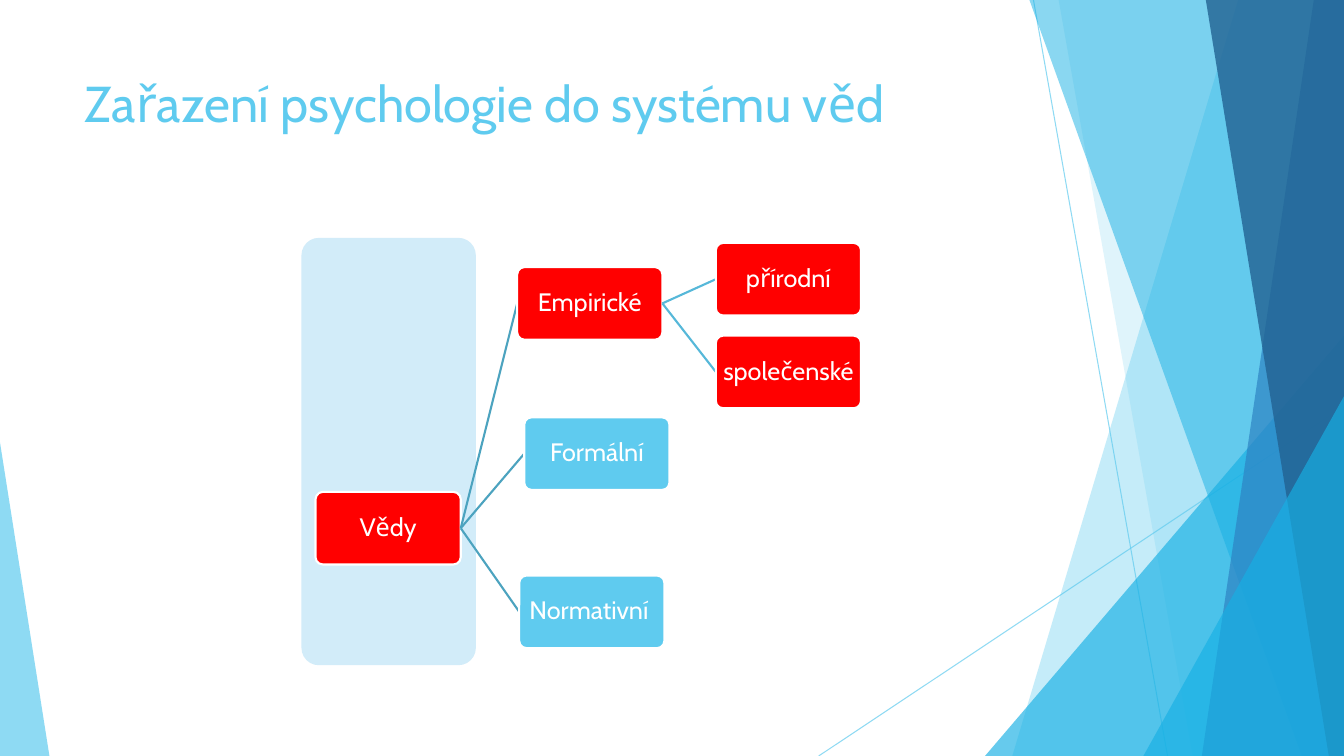
from dataclasses import dataclass

from lxml.etree import SubElement
from pptx import Presentation
from pptx.dml.color import RGBColor
from pptx.enum.shapes import MSO_CONNECTOR, MSO_SHAPE
from pptx.enum.text import MSO_ANCHOR, MSO_AUTO_SIZE, PP_ALIGN
from pptx.oxml.ns import qn
from pptx.shapes.autoshape import Shape
from pptx.shapes.connector import Connector
from pptx.slide import Slide
from pptx.util import Pt

PX = 9144
FONT = "Cabin"
WHITE = RGBColor(0xFF, 0xFF, 0xFF)
RED = RGBColor(0xFF, 0x00, 0x00)
SKY = RGBColor(0x5F, 0xCB, 0xEF)
AZURE = RGBColor(0x17, 0xB0, 0xE4)
BLUE = RGBColor(0x2E, 0x83, 0xC3)
NAVY = RGBColor(0x22, 0x62, 0x92)
PALE = RGBColor(0xD2, 0xEC, 0xF9)
FIRST_LINK = RGBColor(0x4C, 0xA3, 0xBF)
SECOND_LINK = RGBColor(0x56, 0xB8, 0xD9)
SLIDE_WIDTH, SLIDE_HEIGHT = 1333, 750
BOX_WIDTH, BOX_HEIGHT = 144, 72
RIGHT_SIDE, LEFT_SIDE = 3, 1


@dataclass(frozen=True)
class Ray:
    start: tuple[int, int]
    end: tuple[int, int]


@dataclass(frozen=True)
class Band:
    top_left: int
    bottom_left: int
    color: RGBColor
    opacity: int


@dataclass(frozen=True)
class Corner:
    left: int
    top: int
    width: int
    apex: int
    color: RGBColor
    opacity: int


@dataclass(frozen=True)
class Science:
    name: str
    left: int
    top: int
    color: RGBColor
    parent: str = ""
    link_color: RGBColor = FIRST_LINK


RAYS = [Ray((1025, 0), (1158, 750)), Ray((1333, 403), (812, 750))]

FACETS = [
    Band(1228, 1004, SKY, 36),
    Band(1050, 1183, SKY, 20),
    Corner(977, 333, 356, 1, AZURE, 66),
    Band(1021, 1291, AZURE, 50),
    Band(1303, 1192, BLUE, 70),
    Band(1196, 1318, NAVY, 80),
    Corner(1134, 393, 199, 1, AZURE, 66),
    Corner(0, 439, 49, 0, SKY, 70),
]

SCIENCES = [
    Science("Vědy", 313, 488, RED),
    Science("Empirické", 513, 265, RED, "Vědy"),
    Science("přírodní", 710, 241, RED, "Empirické", SECOND_LINK),
    Science("společenské", 710, 333, RED, "Empirické", SECOND_LINK),
    Science("Formální", 520, 414, SKY, "Vědy"),
    Science("Normativní ", 515, 571, SKY, "Vědy"),
]


def set_opacity(shape: Shape | Connector, percent: int) -> None:
    for color in shape.element.spPr.iter(qn("a:srgbClr")):
        SubElement(color, qn("a:alpha")).set("val", str(percent * 1000))


def paint(shape: Shape, color: RGBColor) -> None:
    shape.shadow.inherit = False
    shape.fill.solid()
    shape.fill.fore_color.rgb = color
    shape.line.fill.background()


def add_preset(slide: Slide, kind: MSO_SHAPE, left: int, top: int, width: int,
               height: int, adjustment: float) -> Shape:
    shape = slide.shapes.add_shape(kind, left * PX, top * PX, width * PX, height * PX)
    shape.adjustments[0] = adjustment
    return shape


def add_line(slide: Slide, start: tuple[int, int], end: tuple[int, int],
             color: RGBColor, width: float) -> Connector:
    line = slide.shapes.add_connector(
        MSO_CONNECTOR.STRAIGHT, *(value * PX for value in (*start, *end)))
    line.line.color.rgb = color
    line.line.width = Pt(width)
    SubElement(line.element.spPr, qn("a:effectLst"))
    return line


def add_facet(slide: Slide, facet: Band | Corner) -> None:
    if isinstance(facet, Band):
        builder = slide.shapes.build_freeform(facet.top_left, 0, scale=PX)
        builder.add_line_segments([
            (SLIDE_WIDTH, 0), (SLIDE_WIDTH, SLIDE_HEIGHT),
            (facet.bottom_left, SLIDE_HEIGHT)])
        shape = builder.convert_to_shape()
    else:
        shape = add_preset(slide, MSO_SHAPE.ISOSCELES_TRIANGLE, facet.left, facet.top,
                           facet.width, SLIDE_HEIGHT - facet.top, facet.apex)
    paint(shape, facet.color)
    set_opacity(shape, facet.opacity)


def add_science(slide: Slide, science: Science) -> Shape:
    box = add_preset(slide, MSO_SHAPE.ROUNDED_RECTANGLE, science.left, science.top,
                     BOX_WIDTH, BOX_HEIGHT, 0.1)
    paint(box, science.color)
    box.line.color.rgb = WHITE
    box.line.width = Pt(1.5)
    frame = box.text_frame
    frame.text = science.name
    frame.word_wrap = True
    frame.vertical_anchor = MSO_ANCHOR.MIDDLE
    frame.margin_left = frame.margin_right = 3 * PX
    frame.margin_top = frame.margin_bottom = 3 * PX
    para = frame.paragraphs[0]
    para.alignment = PP_ALIGN.CENTER
    para.line_spacing = 0.9
    para.font.name = FONT
    para.font.size = Pt(18)
    para.font.color.rgb = WHITE
    return box


def add_tree(slide: Slide) -> None:
    boxes: dict[str, Shape] = {}
    for science in SCIENCES:
        box = boxes[science.name] = add_science(slide, science)
        if science.parent:
            link = add_line(slide, (0, 0), (0, 0), science.link_color, 1.5)
            link.begin_connect(boxes[science.parent], RIGHT_SIDE)
            link.end_connect(box, LEFT_SIDE)
            box.element.addprevious(link.element)


def set_title(slide: Slide, text: str) -> None:
    title = slide.shapes.title
    title.left, title.top, title.width, title.height = (
        value * PX for value in (74, 67, 940, 144))
    frame = title.text_frame
    frame.text = text
    frame.word_wrap = True
    frame.auto_size = MSO_AUTO_SIZE.NONE
    frame.vertical_anchor = MSO_ANCHOR.TOP
    para = frame.paragraphs[0]
    para.alignment = PP_ALIGN.LEFT
    para.font.name = FONT
    para.font.size = Pt(36)
    para.font.color.rgb = SKY


def main() -> None:
    deck = Presentation()
    deck.slide_width = SLIDE_WIDTH * PX
    deck.slide_height = SLIDE_HEIGHT * PX
    page = deck.slides.add_slide(deck.slide_layouts.get_by_name("Title Only"))
    set_title(page, "Zařazení psychologie do systému věd")
    for ray in RAYS:
        set_opacity(add_line(page, ray.start, ray.end, SKY, 0.75), 70)
    for facet in FACETS:
        add_facet(page, facet)
    panel = add_preset(page, MSO_SHAPE.ROUNDED_RECTANGLE, 299, 236, 173, 424, 0.1)
    paint(panel, PALE)
    add_tree(page)
    deck.save("out.pptx")


if __name__ == "__main__":
    main()
